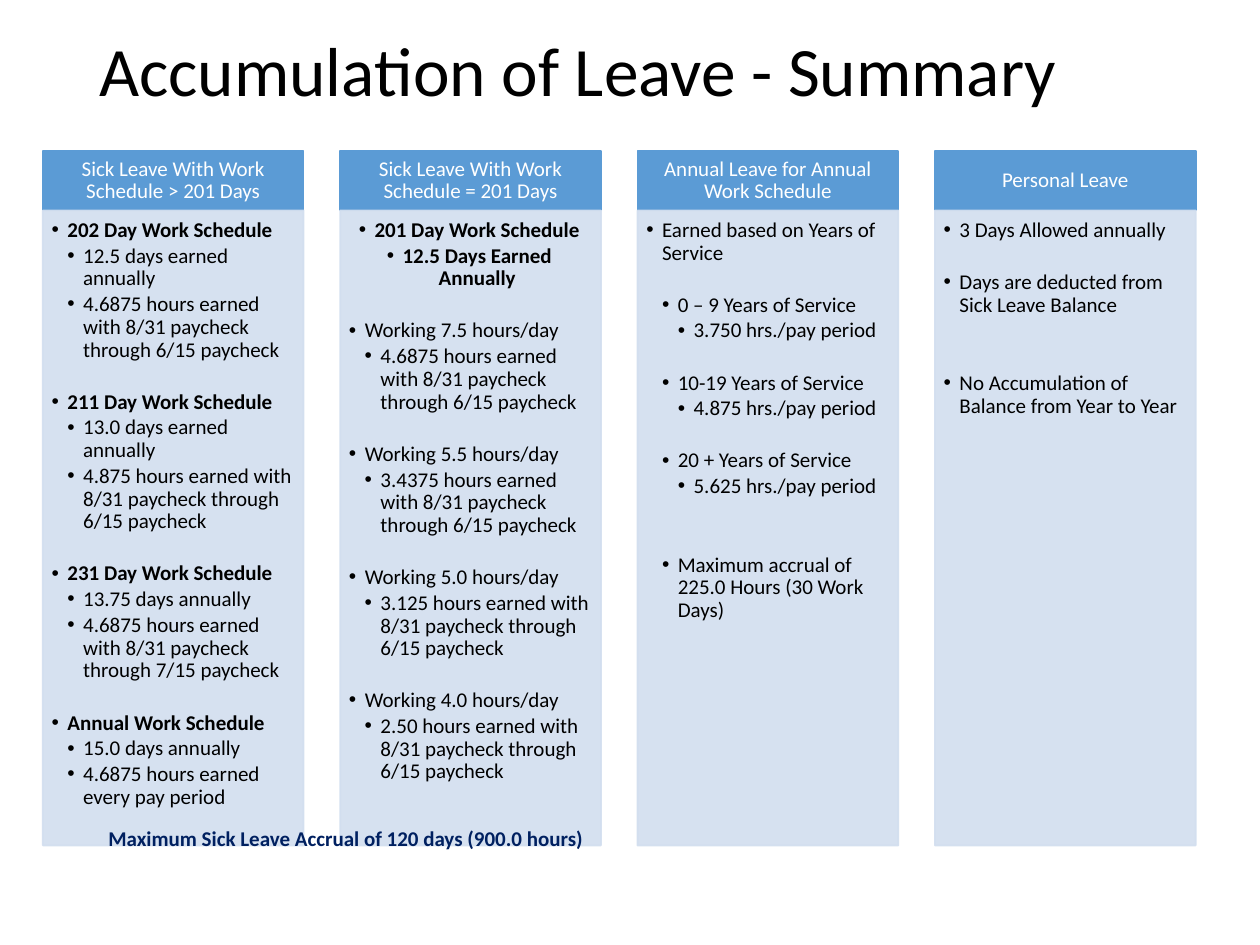
"""Build the leave accumulation summary slide with four headed columns."""
from lxml.etree import SubElement
from pptx import Presentation
from pptx.dml.color import RGBColor
from pptx.enum.shapes import MSO_SHAPE as Shape
from pptx.enum.text import MSO_ANCHOR as Anchor, PP_ALIGN as Align
from pptx.oxml.ns import qn
from pptx.util import Inches, Pt

COLORS = {"header": "5B9BD5", "body": "D2DEEF", "white": "FFFFFF",
          "black": "000000", "navy": "002060"}
TITLE = "Accumulation of Leave - Summary"
FOOTER = "Maximum Sick Leave Accrual of 120 days (900.0 hours)"

# Each item: level, gap lines before, style flags (b bold, c centred), text
COLUMNS = [
    ("Sick Leave With Work Schedule > 201 Days", [
        (1, 0, "b", "202 Day Work Schedule"),
        (2, 0, "", "12.5 days earned annually"),
        (2, 0, "", "4.6875 hours earned with 8/31 paycheck through 6/15 paycheck"),
        (1, 1, "b", "211 Day Work Schedule"),
        (2, 0, "", "13.0 days earned annually"),
        (2, 0, "", "4.875 hours earned with 8/31 paycheck through 6/15 paycheck"),
        (1, 1, "b", "231 Day Work Schedule"),
        (2, 0, "", "13.75 days annually"),
        (2, 0, "", "4.6875 hours earned with 8/31 paycheck through 7/15 paycheck"),
        (1, 1, "b", "Annual Work Schedule"),
        (2, 0, "", "15.0 days annually"),
        (2, 0, "", "4.6875 hours earned every pay period"),
    ]),
    ("Sick Leave With Work Schedule = 201 Days", [
        (1, 0, "bc", "201 Day Work Schedule"),
        (1, 0, "bc", "12.5 Days Earned Annually"),
        (1, 1, "", "Working 7.5 hours/day"),
        (2, 0, "", "4.6875 hours earned with 8/31 paycheck through 6/15 paycheck"),
        (1, 1, "", "Working 5.5 hours/day"),
        (2, 0, "", "3.4375 hours earned with 8/31 paycheck through 6/15 paycheck"),
        (1, 1, "", "Working 5.0 hours/day"),
        (2, 0, "", "3.125 hours earned with 8/31 paycheck through 6/15 paycheck"),
        (1, 1, "", "Working 4.0 hours/day"),
        (2, 0, "", "2.50 hours earned with 8/31 paycheck through 6/15 paycheck"),
    ]),
    ("Annual Leave for Annual Work Schedule", [
        (1, 0, "", "Earned based on Years of Service"),
        (2, 1, "", "0 – 9 Years of Service"),
        (3, 0, "", "3.750 hrs./pay period"),
        (2, 1, "", "10-19 Years of Service"),
        (3, 0, "", "4.875 hrs./pay period"),
        (2, 1, "", "20 + Years of Service"),
        (3, 0, "", "5.625 hrs./pay period"),
        (2, 2, "", "Maximum accrual of 225.0 Hours (30 Work Days)"),
    ]),
    ("Personal Leave", [
        (1, 0, "", "3 Days Allowed annually"),
        (1, 1, "", "Days are deducted from Sick Leave Balance"),
        (1, 2, "", "No Accumulation of Balance from Year to Year"),
    ]),
]
GRID = {"left": 0.34, "step": 2.36, "width": 2.07,
        "header": (1.2, 0.47), "body": (1.67, 5.04)}
INDENT = 0.125
GAP_LINE = 15


def set_all(target, **values):
    for name, value in values.items():
        setattr(target, name, value)


def set_frame(box, anchor, margins):
    frame = box.text_frame
    sides = ("margin_left", "margin_top", "margin_right", "margin_bottom")
    set_all(frame, word_wrap=True, vertical_anchor=anchor,
            **{side: Inches(size) for side, size in zip(sides, margins)})
    return frame


def write(para, text, color, size=12, bold=False, **layout):
    set_all(para, **layout)
    span = para.add_run()
    span.text = text
    set_all(span.font, name="Calibri", size=Pt(size), bold=bold)
    span.font.color.rgb = RGBColor.from_string(COLORS[color])


def add_bullet(para, level):
    props = para._p.get_or_add_pPr()
    props.set("marL", str(Inches(INDENT * level)))
    props.set("indent", str(-Inches(INDENT)))
    SubElement(props, qn("a:buFont")).set("typeface", "Arial")
    SubElement(props, qn("a:buChar")).set("char", "•")


def add_panel(page, column, part, opacity):
    top, height = GRID[part]
    left = GRID["left"] + column * GRID["step"]
    panel = page.shapes.add_shape(Shape.RECTANGLE, *map(
        Inches, (left, top, GRID["width"], height)))
    panel.shadow.inherit = False
    panel.line.width = Pt(1)
    panel.fill.solid()
    panel.line.fill.solid()
    for paint in (panel.fill, panel.line.fill):
        paint.fore_color.rgb = RGBColor.from_string(COLORS[part])
    if opacity < 100:
        for color in panel._element.spPr.iter(qn("a:srgbClr")):
            SubElement(color, qn("a:alpha")).set("val", str(opacity * 1000))
    return panel


def add_column(page, column, heading, items):
    header = add_panel(page, column, "header", 100)
    frame = set_frame(header, Anchor.MIDDLE, (0.09, 0.05, 0.09, 0.05))
    write(frame.paragraphs[0], heading, "white",
          alignment=Align.CENTER, line_spacing=0.9)
    body = add_panel(page, column, "body", 90)
    frame = set_frame(body, Anchor.TOP, (0.07, 0.07, 0.09, 0.1))
    for index, (level, gaps, style, text) in enumerate(items):
        para = frame.add_paragraph() if index else frame.paragraphs[0]
        add_bullet(para, level)
        write(para, text, "black", bold="b" in style, level=level,
              alignment=Align.CENTER if "c" in style else Align.LEFT,
              line_spacing=0.9, space_before=Pt(gaps * GAP_LINE),
              space_after=Pt(1.8))


def add_label(page, area, anchor, margins, *content, **style):
    box = page.shapes.add_textbox(*map(Inches, area))
    frame = set_frame(box, anchor, margins)
    write(frame.paragraphs[0], *content, **style)


def main():
    deck = Presentation()
    set_all(deck, slide_width=Inches(10), slide_height=Inches(7.5))
    page = deck.slides.add_slide(deck.slide_layouts[6])
    add_label(page, (0.69, 0.25, 8.62, 0.68), Anchor.MIDDLE,
              (0.1, 0.05, 0.1, 0.05), TITLE, "black", size=39.6, line_spacing=0.9)
    for column, (heading, items) in enumerate(COLUMNS):
        add_column(page, column, heading, items)
    add_label(page, (0.72, 6.5, 4.03, 0.3), Anchor.TOP,
              (0.14, 0.05, 0.1, 0.05), FOOTER, "navy", bold=True)
    deck.save("out.pptx")


if __name__ == "__main__":
    main()
